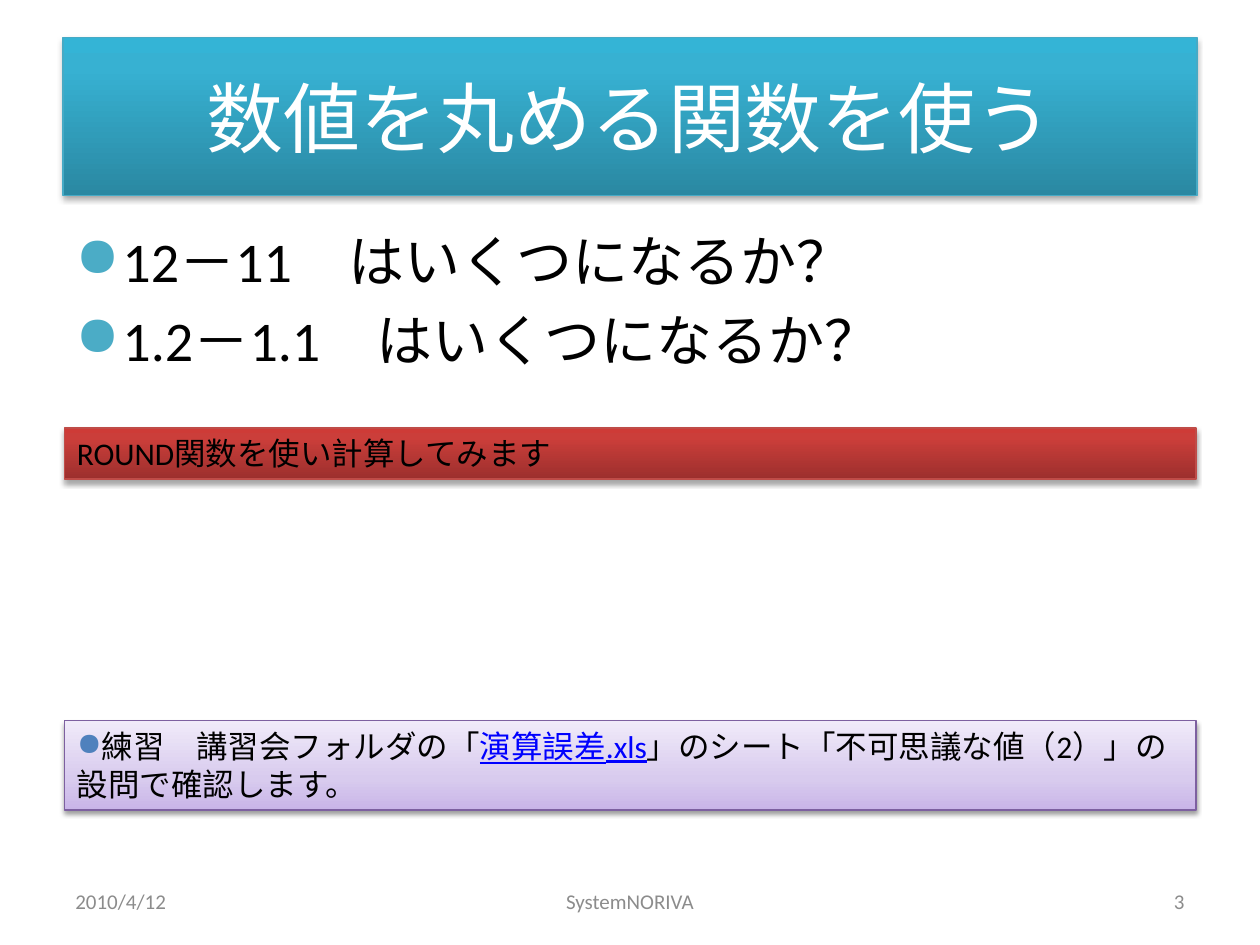
"""Build a slide about rounding functions with a title, two questions and two banners."""
from lxml.etree import SubElement
from pptx import Presentation
from pptx.dml.color import RGBColor
from pptx.enum.shapes import MSO_SHAPE
from pptx.enum.text import MSO_ANCHOR, MSO_AUTO_SIZE, PP_ALIGN
from pptx.oxml.ns import qn
from pptx.util import Cm, Pt

COLORS = {
    "black": "000000", "white": "FFFFFF", "gray": "8C8C8C", "link": "0000FF",
    "teal": "4BACC6", "blue": "4F81BD",
    "title_line": "46AAC5", "red_line": "BF4C48", "purple_line": "7D60A0",
}
TITLE_STOPS = [(0, "2A88A2"), (80, "37B1D2"), (100, "34B4D6")]
RED_STOPS = [(0, "9C2F2D"), (80, "CB3E3A"), (100, "CE3B37")]
PURPLE_STOPS = [(0, "C9B5E8"), (35, "D8CBEE"), (100, "F0EAF9")]


def style_paragraph(para, size, color, align=PP_ALIGN.LEFT, bullet_color=None, indent=0):
    para.alignment = align
    if bullet_color:
        properties = para._p.get_or_add_pPr()
        properties.set("marL", str(Cm(indent)))
        properties.set("indent", str(-Cm(indent)))
        bullet = SubElement(properties, qn("a:buClr"))
        SubElement(bullet, qn("a:srgbClr"), val=COLORS[bullet_color])
        SubElement(properties, qn("a:buChar"), char="●")
    para.font.name = "Calibri"
    para.font.size = Pt(size)
    para.font.color.rgb = RGBColor.from_string(COLORS[color])


def add_banner(left, top, width, height, stops, line, opacity, distance):
    banner = slide.shapes.add_shape(
        MSO_SHAPE.RECTANGLE, Cm(left), Cm(top), Cm(width), Cm(height))
    banner.fill.gradient()
    banner.fill.gradient_angle = 90
    stop_list = banner._element.spPr.find(".//" + qn("a:gsLst"))
    stop_list.clear()
    for position, color in stops:
        stop = SubElement(stop_list, qn("a:gs"), pos=str(position * 1000))
        SubElement(stop, qn("a:srgbClr"), val=color)
    banner.line.color.rgb = RGBColor.from_string(COLORS[line])
    banner.line.width = Pt(0.75)
    banner.shadow.inherit = False
    effects = banner._element.spPr.find(qn("a:effectLst"))
    shadow = SubElement(effects, qn("a:outerShdw"), blurRad=str(Pt(3.1)),
                        dist=str(Pt(distance)), dir="5400000", rotWithShape="0")
    shade = SubElement(shadow, qn("a:srgbClr"), val=COLORS["black"])
    SubElement(shade, qn("a:alpha"), val=str(opacity * 1000))
    banner.text_frame.word_wrap = True
    banner.text_frame.vertical_anchor = MSO_ANCHOR.TOP
    return banner


deck = Presentation()
deck.slide_width, deck.slide_height = Cm(25.4), Cm(19.05)
slide = deck.slides.add_slide(deck.slide_layouts[6])

title = add_banner(1.27, 0.76, 22.86, 3.18, TITLE_STOPS, "title_line", 35, 1.8)
title.text_frame.vertical_anchor = MSO_ANCHOR.MIDDLE
title.text_frame.text = "数値を丸める関数を使う"
style_paragraph(title.text_frame.paragraphs[0], 44, "white", PP_ALIGN.CENTER)

body = slide.shapes.add_textbox(Cm(1.27), Cm(4.45), Cm(22.86), Cm(12.57))
body.text_frame.word_wrap = True
body.text_frame.text = "12－11　はいくつになるか？\n1.2－1.1　はいくつになるか？"
for para in body.text_frame.paragraphs:
    para.space_before = Pt(6.4)
    style_paragraph(para, 32, "black", bullet_color="teal", indent=0.95)

exercise = add_banner(1.3, 14.53, 22.81, 1.8, PURPLE_STOPS, "purple_line", 38, 1.6)
exercise.text_frame.auto_size = MSO_AUTO_SIZE.SHAPE_TO_FIT_TEXT
para = exercise.text_frame.paragraphs[0]
style_paragraph(para, 18, "black", bullet_color="blue")
for text, color in [
    ("練習　講習会フォルダの「", "black"),
    ("演算誤差.xls", "link"),
    ("」のシート「不可思議な値（2）」の設問で確認します。", "black"),
]:
    span = para.add_run()
    span.text = text
    span.font.color.rgb = RGBColor.from_string(COLORS[color])
    span.font.underline = color == "link"

for left, width, text, align in [
    (1.27, 5.92, "2010/4/12", PP_ALIGN.LEFT),
    (8.68, 8.04, "SystemNORIVA", PP_ALIGN.CENTER),
    (18.21, 5.92, "3", PP_ALIGN.RIGHT),
]:
    box = slide.shapes.add_textbox(Cm(left), Cm(17.66), Cm(width), Cm(1.01))
    box.text_frame.word_wrap = True
    box.text_frame.vertical_anchor = MSO_ANCHOR.MIDDLE
    box.text_frame.text = text
    style_paragraph(box.text_frame.paragraphs[0], 12, "gray", align)

rounding = add_banner(1.3, 8.63, 22.81, 1.03, RED_STOPS, "red_line", 35, 1.8)
rounding.text_frame.auto_size = MSO_AUTO_SIZE.SHAPE_TO_FIT_TEXT
rounding.text_frame.text = "ROUND関数を使い計算してみます"
style_paragraph(rounding.text_frame.paragraphs[0], 18, "black")

deck.save("out.pptx")
